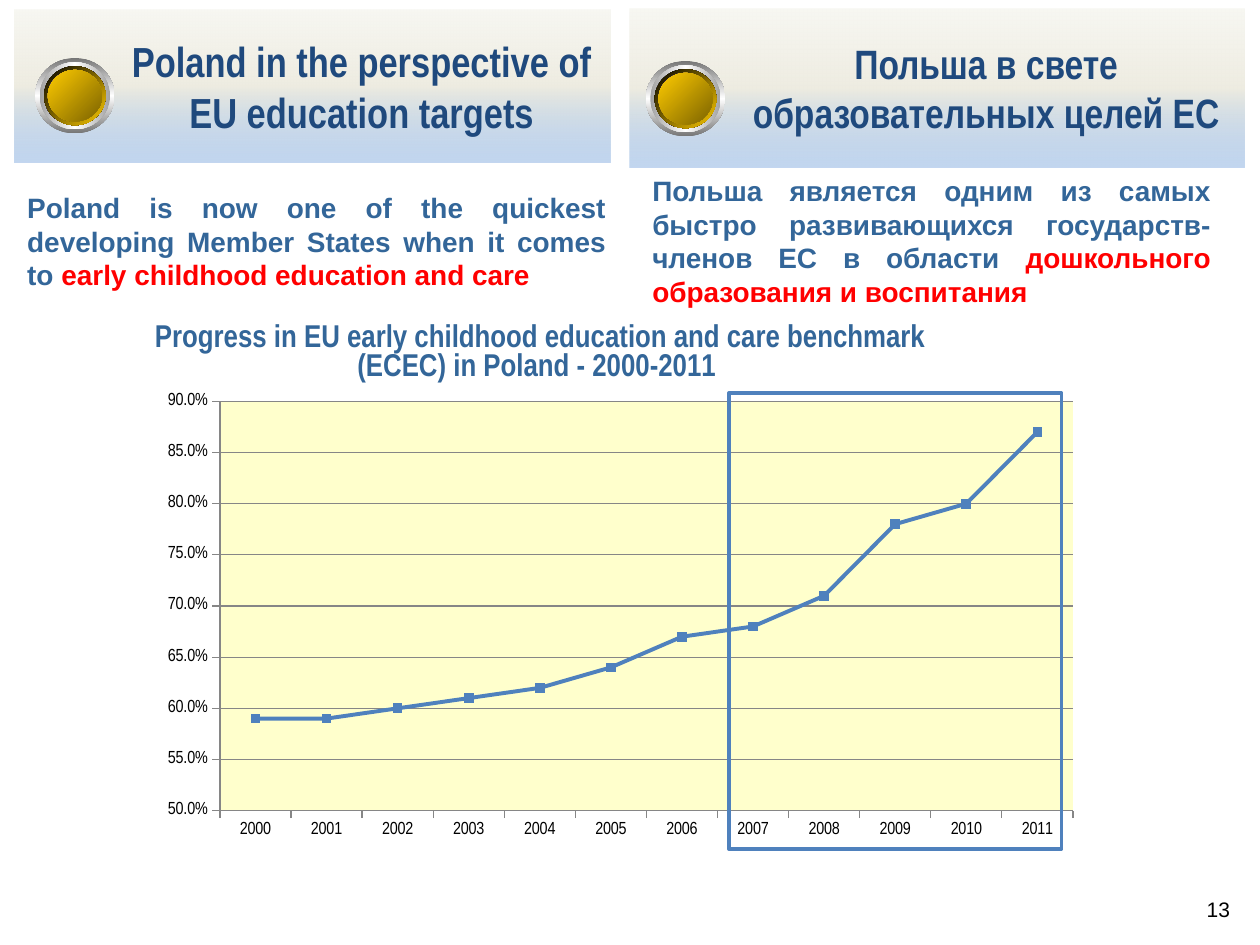
from pptx import Presentation as Deck
from pptx.chart.data import CategoryChartData as Data
from pptx.dml.color import RGBColor as RGB
from pptx.enum.chart import XL_CHART_TYPE as Kind, XL_MARKER_STYLE as Mark
from pptx.enum.chart import XL_TICK_MARK as Tick
from pptx.enum.shapes import MSO_SHAPE as Form
from pptx.enum.text import MSO_ANCHOR as Anchor, MSO_AUTO_SIZE as Fit
from pptx.enum.text import PP_ALIGN as Align
from pptx.oxml import parse_xml
from pptx.oxml.ns import nsdecls, qn
from pptx.util import Cm, Pt

NAVY = RGB(0x1F, 0x49, 0x7D)
STEEL = RGB(0x33, 0x66, 0x99)
BLUE = RGB(0x4F, 0x81, 0xBD)
RED = RGB(0xFF, 0, 0)
BLACK = RGB(0, 0, 0)
GRAY = RGB(0x86, 0x86, 0x86)
CREAM = RGB(0xFF, 0xFF, 0xCC)
SKY, SAND, PALE = RGB(0x8B, 0xB2, 0xE2), RGB(0xEE, 0xEC, 0xE1), RGB(0xF7, 0xF7, 0xF2)
WHITE, GOLD, OLIVE = RGB(0xFF, 0xFF, 0xFF), RGB(0xFF, 0xCC, 0), RGB(0x7C, 0x63, 0)
STEEL_RIM, SOFT_RIM = RGB(0x76, 0x76, 0x76), RGB(0xA2, 0xA2, 0xA2)
PURE, DEEP = RGB(0, 0, 0xFF), RGB(0, 0, 0xC3)

HEAD = dict(name="Arial Narrow", size=Pt(24), bold=True)
BODY = dict(name="Arial", size=Pt(16), bold=True)
PAGE = dict(name="Arial", size=Pt(12))
LABEL = dict(name="Arial Narrow", size=Pt(10), bold=False)
CAPTION = dict(name="Arial Narrow", size=Pt(18), bold=True)

# Ball layers, back to front: width, height, gradient colours, angle
LAYERS = [
    (1.6, 1.52, (STEEL_RIM, WHITE, STEEL_RIM), 90),
    (1.42, 1.35, (SOFT_RIM, WHITE, SOFT_RIM), 0),
    (1.24, 1.19, (WHITE, PURE, WHITE), 45),
    (1.24, 1.19, (BLACK, GOLD), 45),
    (1.09, 1.04, (DEEP, PURE, DEEP), 315),
    (1.09, 1.04, (GOLD, OLIVE), 45),
]
YEARS = [str(year) for year in range(2000, 2012)]
RATES = [0.59, 0.59, 0.6, 0.61, 0.62, 0.64, 0.67, 0.68, 0.71, 0.78, 0.8, 0.87]


def style(font, form, color):
    for key, value in form.items():
        setattr(font, key, value)
    font.color.rgb = color


def place(shape, box):
    for key, value in zip(("left", "top", "width", "height"), box):
        setattr(shape, key, Cm(value))


def blend(shape, colors, angle, alpha=100):
    """Evenly spaced gradient; alpha applies to the first colour."""
    shape.fill.gradient()
    grad = shape.element.spPr.find(qn("a:gradFill"))
    stops = grad.find(qn("a:gsLst"))
    for stop in list(stops):
        stops.remove(stop)
    for i, color in enumerate(colors):
        at = 100000 * i // (len(colors) - 1)
        clear = f'<a:alpha val="{alpha * 1000}"/>' if i == 0 and alpha < 100 else ""
        stops.append(parse_xml(
            f'<a:gs {nsdecls("a")} pos="{at}"><a:srgbClr val="{color}">'
            f'{clear}</a:srgbClr></a:gs>'))
    grad.find(qn("a:lin")).set("ang", str(angle * 60000))


def write(shape, runs, form, align, anchor=Anchor.TOP, indent=0):
    frame = shape.text_frame
    frame.word_wrap = True
    frame.auto_size = Fit.NONE
    frame.vertical_anchor = anchor
    para = frame.paragraphs[0]
    para.alignment = align
    if indent:
        props = para._p.get_or_add_pPr()
        props.set("marL", str(Cm(indent)))
        props.set("indent", "0")
    for words, color in runs:
        run = para.add_run()
        run.text = words
        style(run.font, form, color)


def add_text(slide, box, runs, form, align, anchor=Anchor.TOP):
    text = slide.shapes.add_textbox(*map(Cm, box))
    write(text, runs, form, align, anchor)


def add_form(shapes, kind, box):
    shape = shapes.add_shape(kind, *map(Cm, box))
    shape.shadow.inherit = False
    shape.line.fill.background()
    return shape


def fill_banner(shape, words, form):
    blend(shape, (SKY, SAND, PALE), 270, alpha=52)
    write(shape, [(words, NAVY)], form, Align.CENTER, Anchor.MIDDLE, indent=1.98)


def add_ball(slide, x, y):
    group = slide.shapes.add_group_shape()
    for wide, high, colors, angle in LAYERS:
        box = (x - wide / 2, y - high / 2, wide, high)
        blend(add_form(group.shapes, Form.OVAL, box), colors, angle)


def set_layout(node, index, **parts):
    """Give a chart part a manual place, as fractions of the chart."""
    old = node.find(qn("c:layout"))
    if old is not None:
        node.remove(old)
    body = "".join(f'<c:{key} val="{value}"/>' for key, value in parts.items())
    node.insert(index, parse_xml(
        f'<c:layout {nsdecls("c")}><c:manualLayout>{body}'
        '</c:manualLayout></c:layout>'))


def add_graph(slide):
    data = Data(number_format="0.0%")
    data.categories = YEARS
    data.add_series("Series 1", RATES)
    box = (2.95, 6.12, 19.79, 11.4)
    chart = slide.shapes.add_chart(Kind.LINE_MARKERS, *map(Cm, box), data).chart
    chart.has_legend = False
    style(chart.font, LABEL, BLACK)

    # Caption
    chart.has_title = True
    para = chart.chart_title.text_frame.paragraphs[0]
    run = para.add_run()
    run.text = ("Progress in EU early childhood education and care benchmark "
                "(ECEC) in Poland - 2000-2011 ")
    style(run.font, CAPTION, STEEL)
    set_layout(chart.chart_title._element, 1,
               xMode="edge", yMode="edge", x=0.003, y=0.022)

    # Plot area
    plot = chart._chartSpace.chart.plotArea
    set_layout(plot, 0, layoutTarget="inner", xMode="edge", yMode="edge",
               x=0.075, y=0.173, w=0.869, h=0.724)
    plot.append(parse_xml(
        f'<c:spPr {nsdecls("c", "a")}><a:solidFill><a:srgbClr val="{CREAM}"/>'
        '</a:solidFill></c:spPr>'))

    # Axes
    rates = chart.value_axis
    form = dict(minimum_scale=0.5, maximum_scale=0.9, major_unit=0.05,
                has_major_gridlines=True)
    for key, value in form.items():
        setattr(rates, key, value)
    rates.tick_labels.number_format = "0.0%"
    rates.tick_labels.number_format_is_linked = False
    for axis in (rates, chart.category_axis):
        axis.major_tick_mark = Tick.OUTSIDE
    for item in (rates, chart.category_axis, rates.major_gridlines):
        item.format.line.color.rgb = GRAY
        item.format.line.width = Pt(0.75)

    # Line and markers
    chart.plots[0].vary_by_categories = False
    line = chart.plots[0].series[0]
    line.smooth = False
    line.format.line.color.rgb = BLUE
    line.format.line.width = Pt(2.25)
    line.marker.style = Mark.SQUARE
    line.marker.size = 5
    line.marker.format.fill.solid()
    line.marker.format.fill.fore_color.rgb = BLUE
    line.marker.format.line.color.rgb = BLUE


def main():
    deck = Deck()
    deck.slide_width, deck.slide_height = Cm(25.4), Cm(19.05)
    slide = deck.slides.add_slide(deck.slide_layouts[5])

    # Chart with the recent years framed
    add_graph(slide)
    frame = add_form(slide.shapes, Form.RECTANGLE, (14.7, 7.92, 6.7, 9.2))
    frame.fill.background()
    frame.line.color.rgb = BLUE
    frame.line.width = Pt(2)

    # English heading
    title = slide.shapes.title
    place(title, (0.3, 0.2, 12, 3.08))
    fill_banner(title, "Poland in the perspective of EU education targets", HEAD)
    add_ball(slide, 1.51, 1.93)

    # Russian heading
    banner = add_form(slide.shapes, Form.RECTANGLE, (12.69, 0.17, 12.4, 3.2))
    fill_banner(banner, "Польша в свете образовательных целей ЕС",
                {**HEAD, "size": Pt(23.4)})
    add_ball(slide, 13.82, 1.99)

    # Statements in both languages
    add_text(slide, (0.3, 3.72, 12.17, 2.31), [
        ("Poland is now one of the quickest developing Member States "
         "when it comes to ", STEEL),
        ("early childhood education and care", RED)], BODY, Align.JUSTIFY)
    add_text(slide, (12.9, 3.38, 11.76, 3), [
        ("Польша является одним из самых быстро развивающихся "
         "государств-членов ЕС в области ", STEEL),
        ("дошкольного образования и воспитания", RED)], BODY, Align.JUSTIFY)

    # Page number
    add_text(slide, (23.81, 17.93, 1.5, 0.79), [("13", BLACK)], PAGE,
             Align.CENTER, Anchor.MIDDLE)
    deck.save("out.pptx")


if __name__ == "__main__":
    main()
